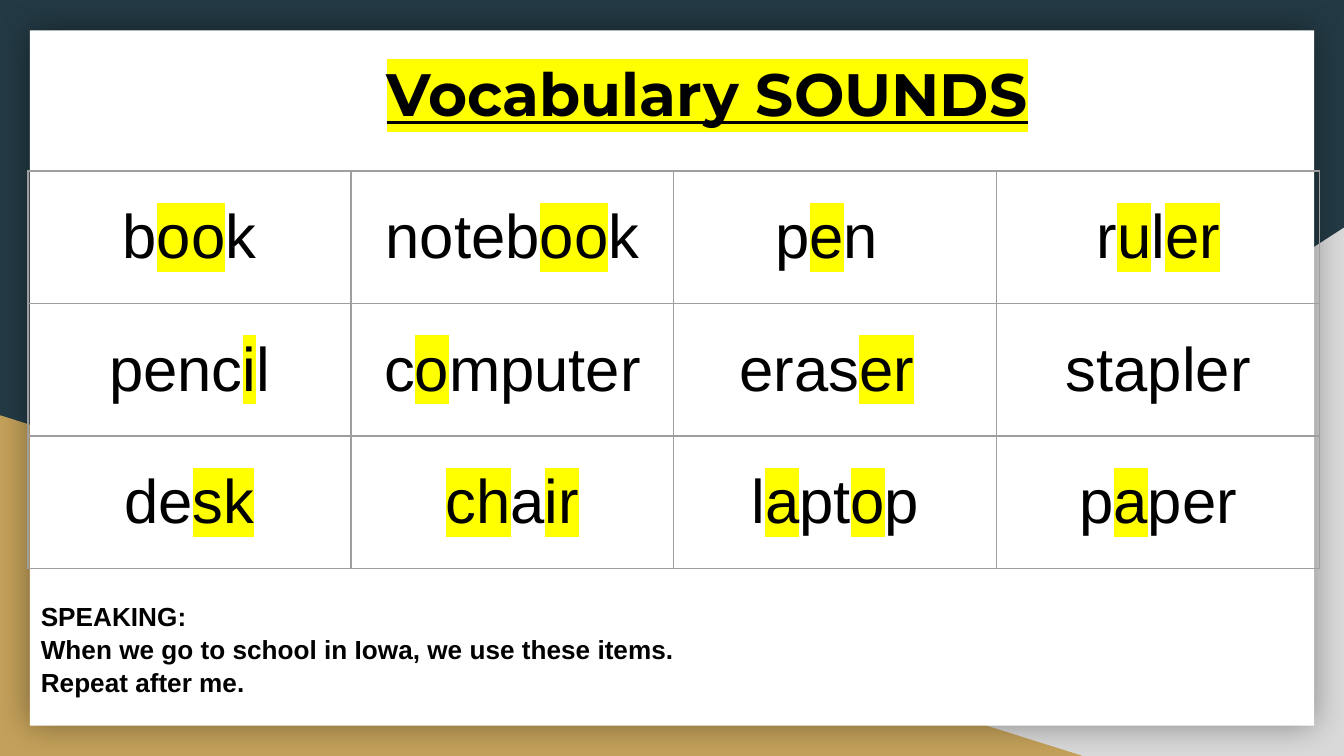
from lxml.etree import SubElement
from pptx import Presentation
from pptx.dml.color import RGBColor
from pptx.enum.shapes import MSO_SHAPE
from pptx.enum.text import MSO_ANCHOR, PP_ALIGN
from pptx.oxml import parse_xml
from pptx.oxml.ns import nsdecls, qn
from pptx.util import Pt

NAVY = RGBColor(0x23, 0x3A, 0x44)
GREY = RGBColor(0xD9, 0xD9, 0xD9)
GOLD = RGBColor(0xC4, 0xA1, 0x5A)
WHITE = RGBColor(0xFF, 0xFF, 0xFF)
BLACK = RGBColor(0x00, 0x00, 0x00)
YELLOW = RGBColor(0xFF, 0xFF, 0x00)
BORDER = RGBColor(0x9E, 0x9E, 0x9E)

# Parts between bars alternate: plain, highlighted, plain, ...
WORDS = [
    ["b|oo|k", "noteb|oo|k", "p|e|n ", "r|u|l|er"],
    ["penc|i|l", "c|o|mputer", "eras|er| ", "stapler"],
    ["de|sk", "|ch|a|ir", "l|a|pt|o|p", "p|a|per"],
]
SPEAKING = [
    "SPEAKING:",
    "When we go to school in Iowa, we use these items.",
    "Repeat after me.",
]


def add_span(paragraph, text, size, font="Arial", bold=False, highlighted=False):
    span = paragraph.add_run()
    span.text = text
    span.font.size = Pt(size)
    span.font.name = font
    span.font.bold = bold
    span.font.color.rgb = BLACK
    if highlighted:
        highlight = parse_xml(
            f'<a:highlight {nsdecls("a")}><a:srgbClr val="{YELLOW}"/></a:highlight>')
        span.font._element.find(qn("a:solidFill")).addnext(highlight)
    return span


deck = Presentation()
deck.slide_width, deck.slide_height = Pt(720), Pt(405)
page = deck.slides.add_slide(deck.slide_layouts[6])
page.background.fill.solid()
page.background.fill.fore_color.rgb = NAVY

# Backdrop: two corner triangles and the white card
backdrop = []
for kind, left, top, width, height, colour in [
    (MSO_SHAPE.RIGHT_TRIANGLE, 282, 122, 438, 283, GREY),
    (MSO_SHAPE.RIGHT_TRIANGLE, 0, 222.5, 580, 182.5, GOLD),
    (MSO_SHAPE.RECTANGLE, 16, 16.2, 688, 372.5, WHITE),
]:
    shape = page.shapes.add_shape(kind, Pt(left), Pt(top), Pt(width), Pt(height))
    shape.shadow.inherit = False
    shape.fill.solid()
    shape.fill.fore_color.rgb = colour
    shape.line.fill.background()
    backdrop.append(shape)
grey_corner, gold_corner, card = backdrop
grey_corner._element.spPr.find(qn("a:xfrm")).set("flipH", "1")
effects = card._element.spPr.find(qn("a:effectLst"))
shadow = SubElement(effects, qn("a:outerShdw"), blurRad=str(Pt(18)), dist="0",
                    dir="0", algn="ctr", rotWithShape="0")
shade = SubElement(shadow, qn("a:srgbClr"), val=str(BLACK))
SubElement(shade, qn("a:alpha"), val="40000")

# Title
title = page.shapes.add_textbox(Pt(100), Pt(12.3), Pt(558), Pt(75)).text_frame
title.word_wrap = True
title.vertical_anchor = MSO_ANCHOR.MIDDLE
title.margin_top = title.margin_bottom = Pt(7.2)
heading = title.paragraphs[0]
heading.alignment = PP_ALIGN.CENTER
span = add_span(heading, "Vocabulary SOUNDS", 32, "Montserrat", True, True)
span.font.underline = True

# Word table
table = page.shapes.add_table(3, 4, Pt(15), Pt(91.6), Pt(692), Pt(213)).table
table.first_row = table.horz_banding = False
for column in table.columns:
    column.width = Pt(173)
for row, words in zip(table.rows, WORDS):
    row.height = Pt(71)
    for cell, word in zip(row.cells, words):
        cell.fill.background()
        cell.vertical_anchor = MSO_ANCHOR.MIDDLE
        cell.margin_left = cell.margin_right = Pt(7.2)
        cell.margin_top = cell.margin_bottom = Pt(7.2)
        for index, side in enumerate(["lnL", "lnR", "lnT", "lnB"]):
            edge = parse_xml(
                f'<a:{side} {nsdecls("a")} w="{Pt(0.75)}"><a:solidFill>'
                f'<a:srgbClr val="{BORDER}"/></a:solidFill></a:{side}>')
            cell._tc.tcPr.insert(index, edge)
        paragraph = cell.text_frame.paragraphs[0]
        paragraph.alignment = PP_ALIGN.CENTER
        for index, part in enumerate(word.split("|")):
            if part:
                add_span(paragraph, part, 33, highlighted=index % 2 == 1)

# Speaking prompt
prompt = page.shapes.add_textbox(Pt(14.8), Pt(317.5), Pt(424), Pt(58.5)).text_frame
prompt.word_wrap = True
for index, line in enumerate(SPEAKING):
    paragraph = prompt.add_paragraph() if index else prompt.paragraphs[0]
    paragraph.line_spacing = 1.05
    add_span(paragraph, line, 14, bold=True)

deck.save("out.pptx")
